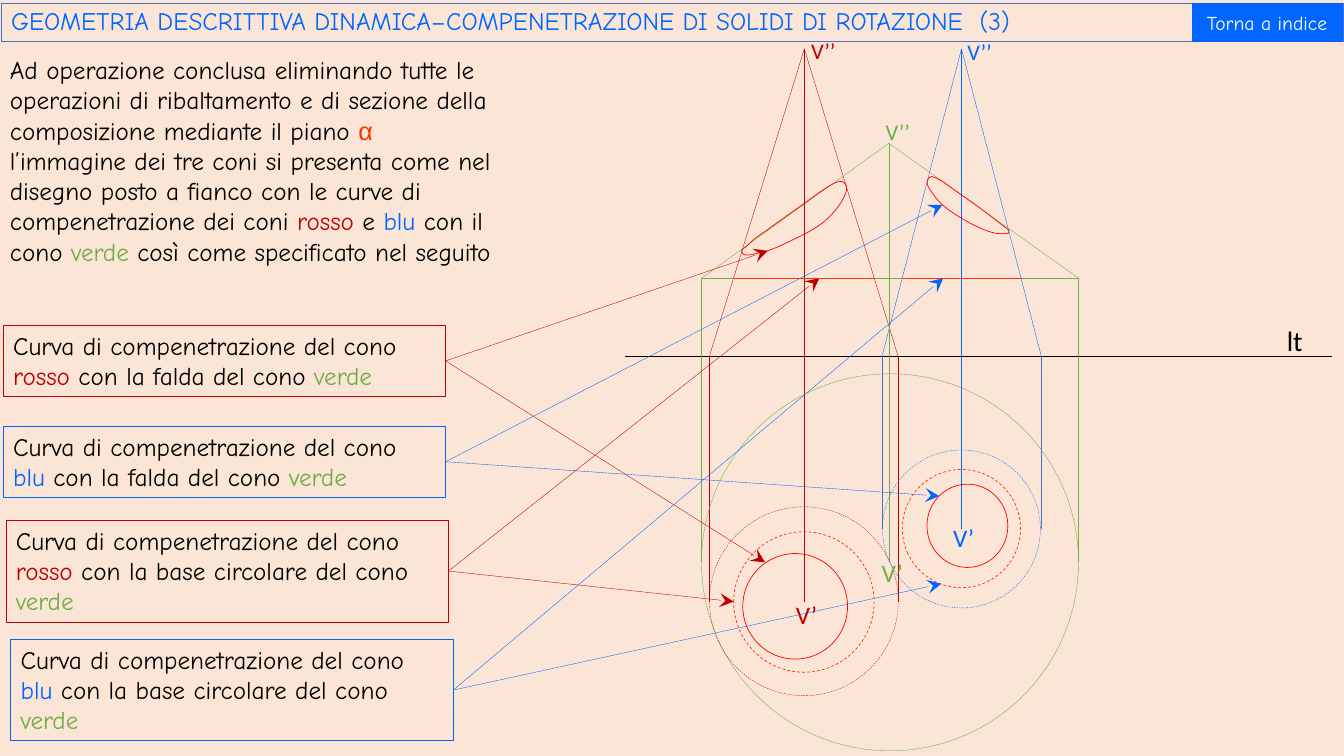
from lxml import etree
from pptx import Presentation
from pptx.dml.color import RGBColor
from pptx.enum.dml import MSO_LINE_DASH_STYLE as Dash
from pptx.enum.shapes import MSO_CONNECTOR, MSO_SHAPE
from pptx.enum.text import MSO_ANCHOR, PP_ALIGN
from pptx.oxml.ns import qn
from pptx.util import Cm, Pt

PEACH = RGBColor(0xFB, 0xE5, 0xD6)
BLACK = RGBColor(0, 0, 0)
WHITE = RGBColor(0xFF, 0xFF, 0xFF)
CRIMSON = RGBColor(0xC0, 0, 0)
RED = RGBColor(0xFF, 0, 0)
ORANGE = RGBColor(0xFF, 0x33, 0)
BLUE = RGBColor(0, 0x66, 0xFF)
STEEL = RGBColor(0x44, 0x72, 0xC4)
GREEN = RGBColor(0x70, 0xAD, 0x47)
FONT = "Comic Neue"

prs = Presentation()
prs.slide_width, prs.slide_height = Cm(33.87), Cm(19.05)
s = prs.slides.add_slide(prs.slide_layouts[6])
s.background.fill.solid()
s.background.fill.fore_color.rgb = PEACH


def style(sp, color, width=0.25, runs=(), size=18, font=FONT, anchor=MSO_ANCHOR.TOP,
          align=PP_ALIGN.LEFT, wrap=True):
    """Outline a shape without fill and write its coloured runs."""
    sp.shadow.inherit = False
    sp.fill.background()
    if color is None:
        sp.line.fill.background()
    else:
        sp.line.color.rgb, sp.line.width = color, Pt(width)
    tf = sp.text_frame
    tf.word_wrap, tf.vertical_anchor = wrap, anchor
    p = tf.paragraphs[0]
    p.alignment = align
    for text, ink in runs:
        r = p.add_run()
        r.text = text
        r.font.color.rgb = ink
        fmt = {"size": Pt(size), "name": "Arial" if text == "α" else font}
        for key, value in fmt.items():
            setattr(r.font, key, value)
    return sp


def line(x1, y1, x2, y2, color, width=0.25, arrow=False):
    c = s.shapes.add_connector(MSO_CONNECTOR.STRAIGHT, Cm(x1), Cm(y1), Cm(x2), Cm(y2))
    c.line.color.rgb, c.line.width = color, Pt(width)
    if arrow:
        etree.SubElement(c.line._get_or_add_ln(), qn("a:tailEnd"),
                         type="stealth", w="lg", len="lg")
    etree.SubElement(c._element.spPr, qn("a:effectLst"))


# Title bar
sp = s.shapes.add_shape(MSO_SHAPE.RECTANGLE, Cm(0.03), Cm(0.08), Cm(33.81), Cm(0.95))
style(sp, STEEL, anchor=MSO_ANCHOR.BOTTOM, runs=[
    ("GEOMETRIA DESCRITTIVA DINAMICA–COMPENETRAZIONE DI SOLIDI DI ROTAZIONE  (3)", BLUE)])
sp.text_frame.paragraphs[0].line_spacing = 0.9

# Ground line, cone axes and generatrices
TOP, GROUND, BASE = 1.23, 8.97, 7.01
line(15.75, GROUND, 33.56, GROUND, BLACK)
for left, apex, right, foot, color, side in [
        (17.88, 20.27, 22.63, 15.16, CRIMSON, CRIMSON),
        (22.23, 24.23, 26.24, 13.34, BLUE, STEEL)]:
    line(apex, foot, apex, TOP, color)
    for x in (left, right):
        line(x, GROUND, x, foot, side)
        line(x, GROUND, apex, TOP, color)

# Green cone
line(22.4, 3.61, 22.4, 14.17, GREEN)
line(17.68, BASE, 27.18, BASE, GREEN)
for x in (17.68, 27.18):
    line(x, 14.17, x, BASE, GREEN)
    line(x, BASE, 22.4, 3.61, GREEN)

# Circles in plan: centre, radii, colour, width, dashed, rotation
OVAL, ARC = MSO_SHAPE.OVAL, MSO_SHAPE.ARC
for kind, cx, cy, rx, ry, color, width, dashed, turn in [
        (OVAL, 22.43, 14.17, 4.75, 4.75, GREEN, 0.25, False, 0),
        (OVAL, 20.26, 15.15, 2.38, 2.38, CRIMSON, 0.25, True, 335),
        (OVAL, 24.23, 13.33, 1.99, 1.99, BLUE, 0.25, True, 335),
        (OVAL, 24.23, 13.32, 1.49, 1.49, ORANGE, 0.5, True, 335),
        (OVAL, 20.26, 15.17, 1.77, 1.77, ORANGE, 0.5, True, 0),
        (ARC, 20.04, 15.28, 1.32, 1.33, RED, 0.5, False, 0),
        (OVAL, 24.38, 13.25, 1.02, 1.05, RED, 0.5, False, 0)]:
    sp = s.shapes.add_shape(kind, Cm(cx - rx), Cm(cy - ry), Cm(2 * rx), Cm(2 * ry))
    style(sp, color, width).rotation = turn
    if dashed:
        sp.line.dash_style = Dash.DASH
    if kind == ARC:
        sp.adjustments[0], sp.adjustments[1] = 108.01, 107.81

# Intersection curves in elevation: Bézier arcs through their knots
blue_curve = [(24.33, 5.56), (23.75, 5.16), (23.42, 4.75), (23.37, 4.57), (23.47, 4.45),
              (23.75, 4.57), (24, 4.75), (24.61, 5.18), (25.15, 5.59), (25.43, 5.82),
              (25.32, 5.89), (24.94, 5.84)]
red_curve = [(19.3, 5.82), (19.05, 5.99), (18.8, 6.22), (18.69, 6.32), (18.82, 6.43),
             (19.35, 6.32), (19.61, 6.22), (20.09, 5.99), (20.42, 5.82), (20.8, 5.56),
             (21.16, 5.16), (21.34, 4.75), (21.18, 4.57), (20.8, 4.75), (20.22, 5.16),
             (19.66, 5.56)]
for curve in (blue_curve, red_curve):
    knots = [(Cm(x), Cm(y)) for x, y in curve]
    n = len(knots)
    outline = s.shapes.build_freeform(*knots[0])
    outline.add_line_segments(knots[1:] + knots[:1], close=True)
    sp = style(outline.convert_to_shape(), RED, 0.5)
    for i, segment in enumerate(list(sp._element.iter(qn("a:lnTo")))):
        a, b, c, d = [knots[(i + k) % n] for k in (-1, 0, 1, 2)]
        segment.tag = qn("a:cubicBezTo")
        controls = [(b[0] + (c[0] - a[0]) / 6, b[1] + (c[1] - a[1]) / 6),
                    (c[0] - (d[0] - b[0]) / 6, c[1] - (d[1] - b[1]) / 6)]
        for k, (x, y) in enumerate(controls):
            segment.insert(k, etree.Element(qn("a:pt"), x=str(round(x - sp.left)),
                                            y=str(round(y - sp.top))))

# Point labels
box_sizes = {16: (1.3, 0.94), 18: (1.09, 1.02), 20: (1.07, 1.12)}
for text, x, y, size, color in [
        ("V’", 19.81, 14.99, 18, CRIMSON), ("V’’", 20.19, 0.81, 16, CRIMSON),
        ("V’", 23.77, 13.03, 18, BLUE), ("V’’", 24.13, 0.84, 16, BLUE),
        ("lt", 32.18, 8.03, 20, BLACK),
        ("V’’", 22.07, 2.84, 16, GREEN), ("V’", 21.97, 13.92, 18, GREEN)]:
    w, h = box_sizes[size]
    sp = s.shapes.add_textbox(Cm(x), Cm(y), Cm(w), Cm(h))
    style(sp, None, runs=[(text, color)], size=size, font="Calibri", wrap=False)

# Explanation
style(s.shapes.add_textbox(Cm(0), Cm(1.25), Cm(12.7), Cm(6.4)), None, runs=[
    ("Ad operazione conclusa eliminando tutte le operazioni di ribaltamento e di sezione "
     "della composizione mediante il piano ", BLACK),
    ("α", ORANGE),
    (" l’immagine dei tre coni si presenta come nel disegno posto a fianco con le curve "
     "di compenetrazione dei coni ", BLACK),
    ("rosso", CRIMSON), (" e ", BLACK), ("blu", BLUE), (" con il cono ", BLACK),
    ("verde ", GREEN), ("così come specificato nel seguito", BLACK)])

# Captions, each with arrows to its two curves
for x, y, h, cone, color, width, part, targets in [
        (0.08, 8.2, 1.79, "rosso", CRIMSON, 0.25, "falda", [(19.35, 6.32), (19.28, 14.17)]),
        (0.08, 10.74, 1.79, "blu", BLUE, 0.25, "falda", [(23.75, 5.16), (23.67, 12.5)]),
        (0.15, 13.11, 2.56, "rosso", CRIMSON, 0.25, "base circolare",
         [(18.49, 15.16), (20.65, BASE)]),
        (0.27, 16.11, 2.56, "blu", BLUE, 0.75, "base circolare",
         [(23.72, 14.71), (23.77, BASE)])]:
    sp = s.shapes.add_shape(MSO_SHAPE.RECTANGLE, Cm(x), Cm(y), Cm(11.15), Cm(h))
    style(sp, color, width, runs=[
        ("Curva di compenetrazione del cono ", BLACK), (cone, color),
        (f" con la {part} del cono ", BLACK), ("verde", GREEN)])
    for tx, ty in targets:
        line(x + 11.15, y + h / 2, tx, ty, color, arrow=True)

# Traces on the green base
for x1, x2 in [(18.49, 22.05), (22.73, 25.76)]:
    line(x1, BASE, x2, BASE, ORANGE, 0.75)

# Index button
sp = s.shapes.add_shape(MSO_SHAPE.ACTION_BUTTON_CUSTOM, Cm(30.03), Cm(0.08), Cm(3.81), Cm(0.99))
style(sp, None, runs=[("Torna a indice", WHITE)], size=14,
      anchor=MSO_ANCHOR.MIDDLE, align=PP_ALIGN.CENTER)
sp.fill.solid()
sp.fill.fore_color.rgb = BLUE

prs.save("out.pptx")
